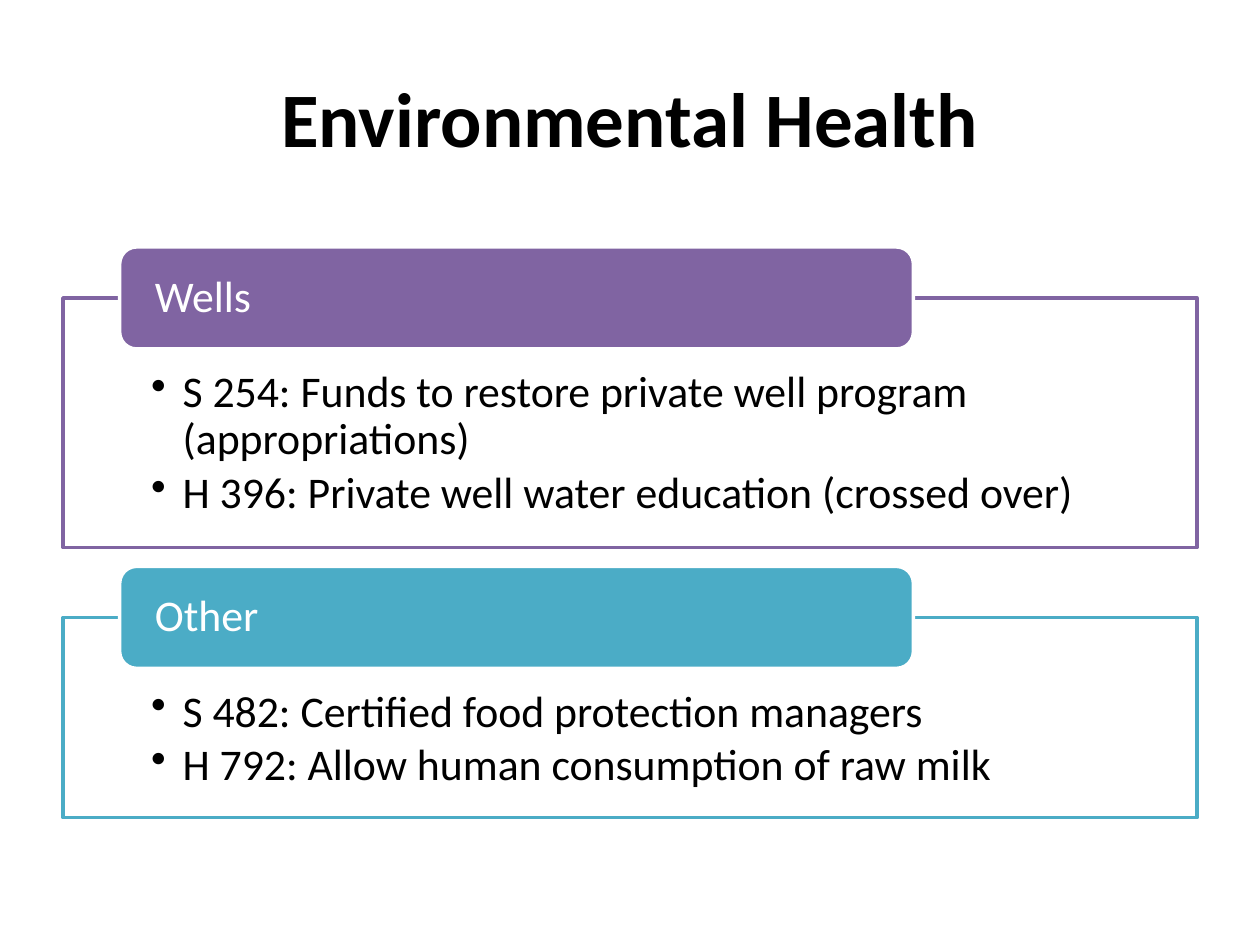
import pptx
import pptx.dml.color
import pptx.enum.shapes
import pptx.enum.text
import pptx.oxml.ns
import pptx.util
from dataclasses import dataclass
from lxml import etree
from pptx.util import Inches

TITLE = "Environmental Health"
SECTIONS = [
    {
        "heading": "Wells",
        "color": "8064A2",
        "height": 1.98,
        "bills": [
            "S 254: Funds to restore private well program (appropriations)",
            "H 396: Private well water education (crossed over)",
        ],
    },
    {
        "heading": "Other",
        "color": "4BACC6",
        "height": 1.59,
        "bills": [
            "S 482: Certified food protection managers",
            "H 792: Allow human consumption of raw milk",
        ],
    },
]


@dataclass(frozen=True)
class Theme:
    font: str = "Calibri"
    title_size: float = 44
    body_size: float = 25
    line_width: float = 2
    dark: str = "000000"
    light: str = "FFFFFF"
    panel_alpha: str = "90000"


THEME = Theme()
LEFT, WIDTH = 0.5, 9
TAB_LEFT, TAB_WIDTH, TAB_HEIGHT = 0.95, 6.3, 0.81
FIRST_TOP, GAP = 1.96, 0.15
BULLET_INDENT = 0.25


def rgb(color):
    return pptx.dml.color.RGBColor.from_string(color)


def write_text(shape, lines, size, color, margins, anchor, bold=False):
    frame = shape.text_frame
    frame.word_wrap = True
    frame.vertical_anchor = anchor
    frame.margin_left, frame.margin_top, frame.margin_right, frame.margin_bottom = map(Inches, margins)
    frame.text = "\n".join(lines)
    for paragraph in frame.paragraphs:
        paragraph.alignment = pptx.enum.text.PP_ALIGN.LEFT
        for run in paragraph.runs:
            run.font.name = THEME.font
            run.font.size = pptx.util.Pt(size)
            run.font.bold = bold
            run.font.color.rgb = rgb(color)
    return frame.paragraphs


def add_box(slide, kind, box, fill, line):
    shape = slide.shapes.add_shape(kind, *map(Inches, box))
    shape.shadow.inherit = False
    shape.fill.solid()
    shape.fill.fore_color.rgb = rgb(fill)
    shape.line.color.rgb = rgb(line)
    shape.line.width = pptx.util.Pt(THEME.line_width)
    return shape


def add_bullet(paragraph):
    properties = paragraph._p.get_or_add_pPr()
    properties.set("marL", str(Inches(BULLET_INDENT)))
    properties.set("indent", str(-Inches(BULLET_INDENT)))
    bullet = etree.SubElement(properties, pptx.oxml.ns.qn("a:buChar"))
    bullet.set("char", "•")


def add_title(slide):
    shape = slide.shapes.add_textbox(*map(Inches, (LEFT, 0.3, WIDTH, 1.25)))
    paragraphs = write_text(shape, [TITLE], THEME.title_size, THEME.dark, (0.1, 0.05, 0.1, 0.05),
                            pptx.enum.text.MSO_ANCHOR.MIDDLE, bold=True)
    paragraphs[0].alignment = pptx.enum.text.PP_ALIGN.CENTER


def add_section(slide, section, top):
    kinds = pptx.enum.shapes.MSO_SHAPE
    anchors = pptx.enum.text.MSO_ANCHOR
    panel_top = top + TAB_HEIGHT / 2
    panel = add_box(slide, kinds.RECTANGLE, (LEFT, panel_top, WIDTH, section["height"]),
                    THEME.light, section["color"])
    fill_color = panel._element.spPr.find(".//" + pptx.oxml.ns.qn("a:srgbClr"))
    etree.SubElement(fill_color, pptx.oxml.ns.qn("a:alpha")).set("val", THEME.panel_alpha)
    bills = write_text(panel, section["bills"], THEME.body_size, THEME.dark,
                       (0.7, 0.57, 0.7, 0.19), anchors.TOP)
    for paragraph in bills:
        paragraph.line_spacing = 0.9
        paragraph.space_after = pptx.util.Pt(THEME.body_size * 0.15)
        add_bullet(paragraph)

    tab = add_box(slide, kinds.ROUNDED_RECTANGLE, (TAB_LEFT, top, TAB_WIDTH, TAB_HEIGHT),
                  section["color"], THEME.light)
    heading = write_text(tab, [section["heading"]], THEME.body_size, THEME.light,
                         (0.24, 0, 0.24, 0), anchors.MIDDLE)
    heading[0].line_spacing = 0.9
    return panel_top + section["height"] + GAP


def main():
    """Build the environmental health slide."""
    presentation = pptx.Presentation()
    presentation.slide_width, presentation.slide_height = Inches(10), Inches(7.5)
    slide = presentation.slides.add_slide(presentation.slide_layouts[6])
    add_title(slide)
    top = FIRST_TOP
    for section in SECTIONS:
        top = add_section(slide, section, top)
    presentation.save("out.pptx")


if __name__ == "__main__":
    main()
